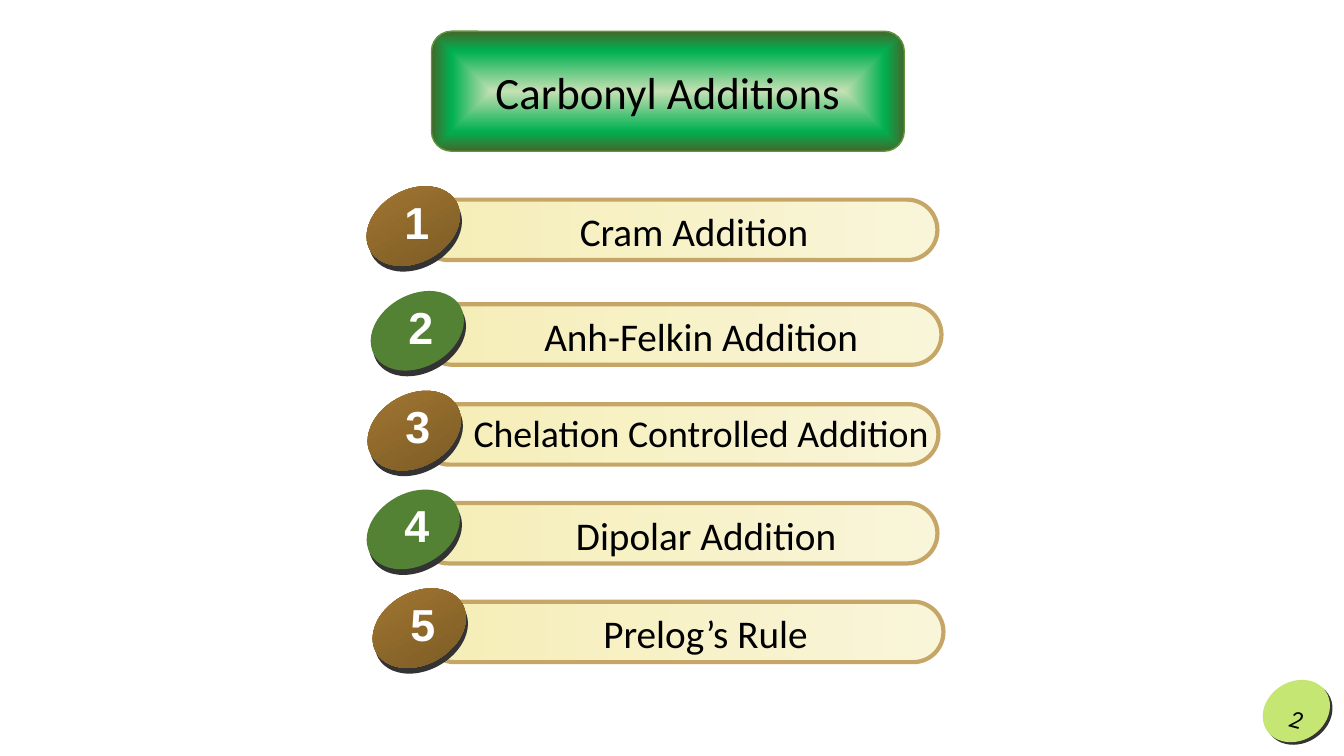
"""Build an agenda slide of five numbered carbonyl addition topics."""
from lxml.etree import SubElement
from pptx import Presentation
from pptx.dml.color import RGBColor as RGB
from pptx.enum.shapes import MSO_SHAPE as Kind
from pptx.enum.text import MSO_ANCHOR as Anchor, PP_ALIGN as Align
from pptx.oxml import parse_xml
from pptx.oxml.ns import qn
from pptx.util import Pt

INK = {
    "black": "000000", "white": "FFFFFF", "shade": "333333",
    "cream": "F9F5D9", "straw": "F5EEB7", "tan": "C5A667",
    "bronze": "A67A32", "brown": "775724", "leaf": "548235",
    "mint": "C5E0B4", "green": "00B050", "moss": "43682B",
    "edge": "60943D", "lime": "C5E672",
}
NS = "http://schemas.openxmlformats.org/drawingml/2006/main"


def draw(home, kind, box, fill, turn=0, line=None, way=None):
    """Add a shape with a plain fill, or a gradient when fill lists stops."""
    shape = home.add_shape(kind, *[Pt(n) for n in box])
    shape.shadow.inherit = False
    shape.rotation = turn
    if way is None:
        shape.fill.solid()
        shape.fill.fore_color.rgb = RGB.from_string(INK[fill])
    else:
        shape.fill.background()
        stops = "".join(
            f'<a:gs pos="{pos * 1000}"><a:srgbClr val="{INK[name]}"/></a:gs>'
            for pos, name in fill)
        grad = parse_xml(f'<a:gradFill xmlns:a="{NS}" rotWithShape="1">'
                         f'<a:gsLst>{stops}</a:gsLst></a:gradFill>')
        if way == "shape":
            mid = SubElement(SubElement(grad, qn("a:path"), path="shape"),
                             qn("a:fillToRect"))
            for side in "ltrb":
                mid.set(side, "50000")
        else:
            SubElement(grad, qn("a:lin"), ang=str(way * 60000), scaled="0")
        props = shape.fill._xPr
        props.replace(props.find(qn("a:noFill")), grad)
    if line:
        shape.line.color.rgb = RGB.from_string(INK[line[0]])
        shape.line.width = Pt(line[1])
    else:
        shape.line.fill.background()
    return shape


def write(home, box, text, size, face="Calibri", ink="black", wrap=True):
    """Add a centred one-line text box."""
    note = home.add_textbox(*[Pt(n) for n in box])
    note.text_frame.word_wrap = wrap
    para = note.text_frame.paragraphs[0]
    para.text = text
    para.alignment = Align.CENTER
    font = para.font
    font.name, font.size = face, Pt(size)
    font.color.rgb = RGB.from_string(INK[ink])
    return note


deck = Presentation()
deck.slide_width, deck.slide_height = Pt(960), Pt(540)
slide = deck.slides.add_slide(deck.slide_layouts[6])

rows = [
    ("Cram Addition", 298.8, 142.6, 495.7, 28),
    ("Anh-Felkin Addition", 301.7, 217.4, 500.8, 28),
    ("Chelation Controlled Addition", 299.5, 288.7, 500.8, 27),
    ("Dipolar Addition", 298.8, 359.3, 504.4, 28),
    ("Prelog’s Rule", 303.1, 429.8, 504, 28),
]
for num, (label, x, y, mid, size) in enumerate(rows, 1):
    row = slide.shapes.add_group_shape().shapes
    bar = draw(row, Kind.ROUNDED_RECTANGLE, (x, y, 370.8, 43.2),
               [(0, "straw"), (100, "cream")], line=("tan", 3), way=0)
    bar.adjustments[0] = 0.5
    drop = 2.2 if size == 28 else 0.7
    write(row, (mid - 177.5, y + drop, 355, 41), label, size)
    draw(row, Kind.OVAL, (x - 37.4, y - 2.9, 70.6, 51.8), "shade", 330.7)
    disc = (x - 38.9, y - 7, 70.6, 51.8)
    if num % 2:
        draw(row, Kind.OVAL, disc, [(0, "bronze"), (100, "brown")], 330.7, way=90)
    else:
        draw(row, Kind.OVAL, disc, "leaf", 330.7)
    digit = write(row, (x - 17.3, y - 7.2, 32.4, 46), str(num), 32,
                  "Arial", "white", False)
    digit.text_frame.paragraphs[0].font.bold = True

title = draw(slide.shapes, Kind.ROUNDED_RECTANGLE, (308.2, 22.3, 337.7, 85.7),
             [(0, "mint"), (67, "green"), (100, "moss")],
             line=("edge", 1), way="shape")
title.text_frame.vertical_anchor = Anchor.MIDDLE
head = title.text_frame.paragraphs[0]
head.text = "Carbonyl Additions"
head.alignment = Align.CENTER
head.font.name, head.font.size = "Calibri", Pt(32)
head.font.color.rgb = RGB.from_string(INK["black"])

for step, ink in ((1.8, "shade"), (0, "lime")):
    draw(slide.shapes, Kind.OVAL, (900.8 + step, 487 + step, 50.4, 41.8), ink, 327)
page = write(slide.shapes, (907, 495, 38, 36), "2", 18, wrap=False)
page.rotation = 15
page.text_frame.paragraphs[0].font.italic = True
page.text_frame.vertical_anchor = Anchor.MIDDLE

deck.save("out.pptx")
